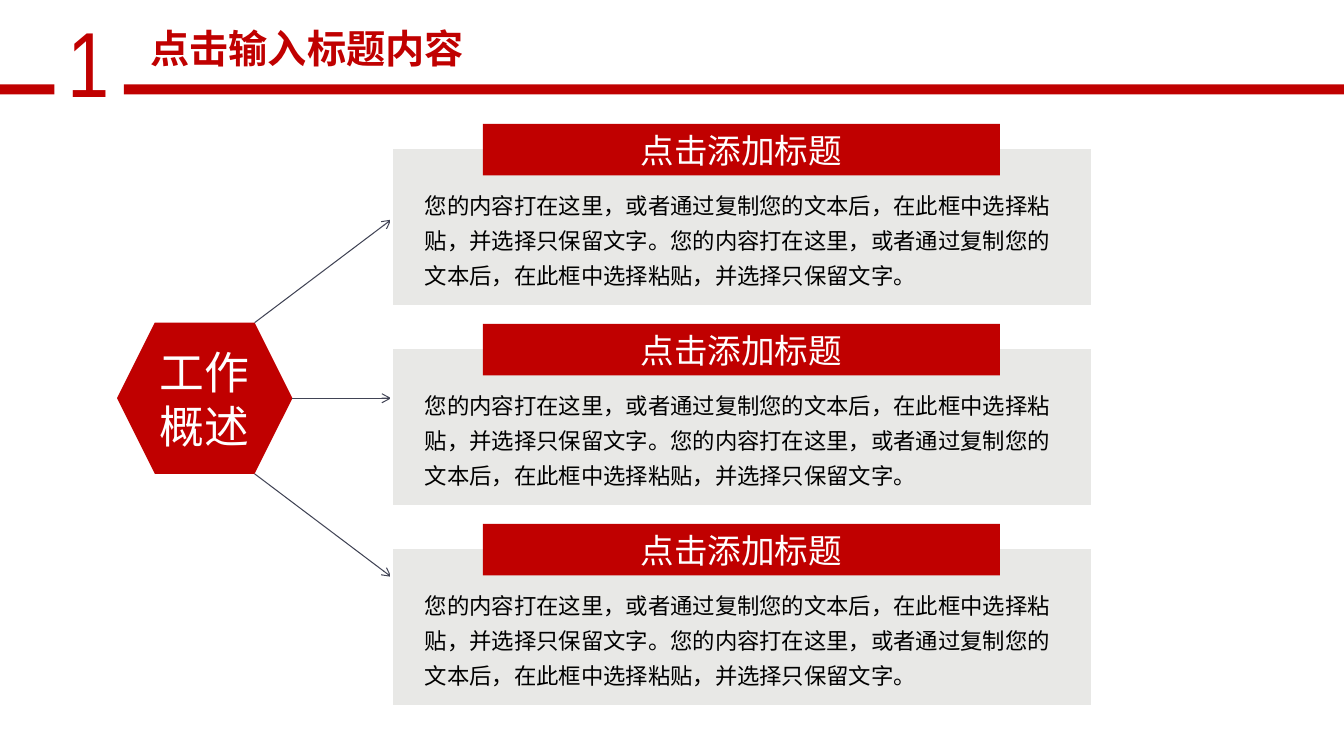
"""Build a slide linking a work overview hexagon to three titled text cards."""
from dataclasses import dataclass

from lxml.etree import SubElement
from pptx import Presentation
from pptx.dml.color import RGBColor
from pptx.enum.shapes import MSO_CONNECTOR as Connector, MSO_SHAPE as Shape
from pptx.enum.text import MSO_ANCHOR as Anchor, MSO_AUTO_SIZE as AutoSize, PP_ALIGN as Align
from pptx.oxml.ns import qn
from pptx.util import Cm, Pt

TITLE = "点击输入标题内容"
NUMBER = "1"
HUB = "工作概述"
SENTENCE = "您的内容打在这里，或者通过复制您的文本后，在此框中选择粘贴，并选择只保留文字。"
CARDS = [("点击添加标题", SENTENCE * 2)] * 3


@dataclass(frozen=True)
class Theme:
    red: str = "C00000"
    grey: str = "E8E8E6"
    white: str = "FFFFFF"
    black: str = "000000"
    arrow: str = "414455"
    font: str = "Noto Sans CJK SC"
    number_font: str = "Arial Narrow"
    number_size: int = 66
    hub_size: int = 32
    title_size: int = 28
    header_size: int = 24
    body_size: int = 16


THEME = Theme()
SLIDE_WIDTH, SLIDE_HEIGHT = 33.87, 19.05
TITLE_BOX = (3.18, 0.48, 9.12, 1.45)
NUMBER_BOX = (1.45, 0, 0.86, 3.07)
BAR_TOP, BAR_HEIGHT = 2.13, 0.25
BARS = [(0, 1.37), (3.12, SLIDE_WIDTH)]
HUB_BOX = (2.95, 8.13, 4.42, 3.81)
PANEL_BOX = (9.86, 3.71, 17.68, 4.01)
HEADER_BOX = (12.17, 3.12, 13.03, 1.3)
BODY_BOX = (10.46, 4.52, 16.79, 2.92)
CARD_PITCH = 5.04
ARROW_RISE = 4.5


def lengths(box, drop=0):
    left, top, width, height = box
    return Cm(left), Cm(top + drop), Cm(width), Cm(height)


def write(shape, text, size, color, align=Align.LEFT, font=THEME.font, bold=False):
    frame = shape.text_frame
    frame.text = text
    frame.word_wrap = True
    frame.auto_size = AutoSize.NONE
    paragraph = frame.paragraphs[0]
    paragraph.alignment = align
    run = paragraph.runs[0]
    run.font.size = Pt(size)
    run.font.bold = bold
    run.font.color.rgb = RGBColor.from_string(color)
    run.font.name = font
    SubElement(run.font._element, qn("a:ea"), typeface=font)
    return paragraph


def add_block(slide, kind, box, color, drop=0):
    shape = slide.shapes.add_shape(kind, *lengths(box, drop))
    shape.shadow.inherit = False
    shape.fill.solid()
    shape.fill.fore_color.rgb = RGBColor.from_string(color)
    shape.line.fill.background()
    shape.text_frame.vertical_anchor = Anchor.MIDDLE
    return shape


def add_text(slide, box, drop, *style, **options):
    return write(slide.shapes.add_textbox(*lengths(box, drop)), *style, **options)


def add_arrow(slide, *ends):
    arrow = slide.shapes.add_connector(Connector.STRAIGHT, *map(Cm, ends))
    arrow.line.color.rgb = RGBColor.from_string(THEME.arrow)
    arrow.line.width = Pt(0.75)
    SubElement(arrow.line._get_or_add_ln(), qn("a:tailEnd"), type="arrow")
    SubElement(arrow._element.spPr, qn("a:effectLst"))


def add_heading(slide):
    title = slide.shapes.title
    title.left, title.top, title.width, title.height = lengths(TITLE_BOX)
    write(title, TITLE, THEME.title_size, THEME.red, Align.CENTER, bold=True)
    add_text(slide, NUMBER_BOX, 0, NUMBER, THEME.number_size, THEME.red, font=THEME.number_font)
    for start, end in BARS:
        add_block(slide, Shape.RECTANGLE, (start, BAR_TOP, end - start, BAR_HEIGHT), THEME.red)


def add_hub(slide):
    hub = add_block(slide, Shape.HEXAGON, HUB_BOX, THEME.red)
    write(hub, HUB, THEME.hub_size, THEME.white, Align.CENTER)
    left, top, width, height = HUB_BOX
    middle = top + height / 2
    for side in (-1, 0, 1):
        corner = left + width - abs(side) * height / 4
        add_arrow(slide, corner, middle + side * height / 2,
                  PANEL_BOX[0], middle + side * ARROW_RISE)


def add_card(slide, header, body, drop):
    panel = add_block(slide, Shape.RECTANGLE, PANEL_BOX, THEME.grey, drop)
    panel.line.color.rgb = RGBColor.from_string(THEME.white)
    panel.line.width = Pt(2)
    banner = add_block(slide, Shape.RECTANGLE, HEADER_BOX, THEME.red, drop)
    write(banner, header, THEME.header_size, THEME.white, Align.CENTER)
    paragraph = add_text(slide, BODY_BOX, drop, body, THEME.body_size, THEME.black)
    paragraph.line_spacing = 1.3


def main():
    presentation = Presentation()
    presentation.slide_width, presentation.slide_height = Cm(SLIDE_WIDTH), Cm(SLIDE_HEIGHT)
    slide = presentation.slides.add_slide(presentation.slide_layouts[5])
    add_heading(slide)
    add_hub(slide)
    for index, (header, body) in enumerate(CARDS):
        add_card(slide, header, body, index * CARD_PITCH)
    presentation.save("out.pptx")


if __name__ == "__main__":
    main()
